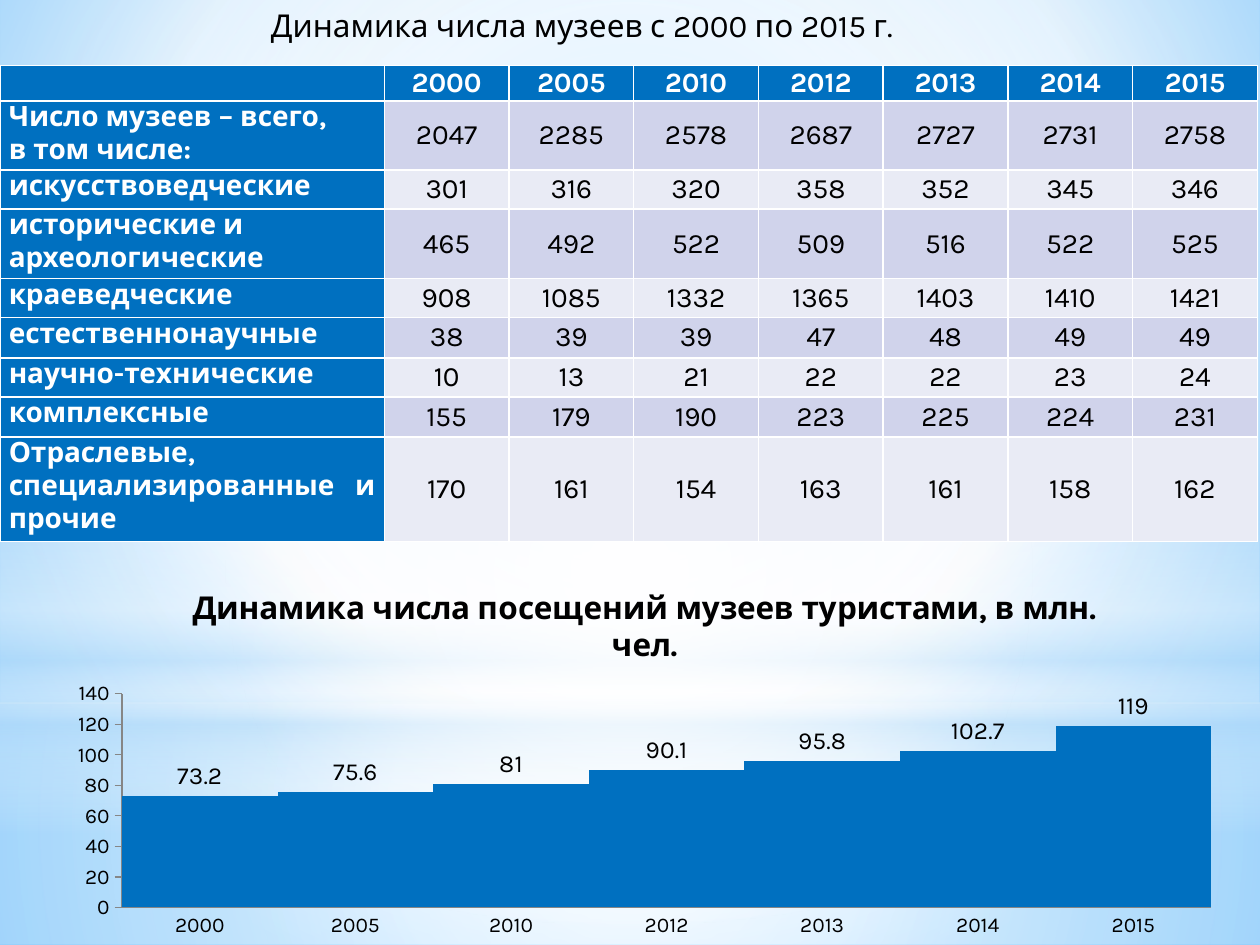
from lxml import etree
from pptx import Presentation
from pptx.chart.data import CategoryChartData
from pptx.dml.color import RGBColor
from pptx.enum.chart import XL_CHART_TYPE, XL_LABEL_POSITION, XL_TICK_MARK
from pptx.enum.shapes import MSO_SHAPE
from pptx.enum.text import MSO_ANCHOR, PP_ALIGN
from pptx.oxml.ns import nsdecls, qn
from pptx.util import Inches, Pt

COLUMN = XL_CHART_TYPE.COLUMN_CLUSTERED
OUTSIDE_END = XL_LABEL_POSITION.OUTSIDE_END
NO_TICK, TICK_OUT = XL_TICK_MARK.NONE, XL_TICK_MARK.OUTSIDE
RECT, OVAL = MSO_SHAPE.RECTANGLE, MSO_SHAPE.OVAL
MIDDLE, TOP = MSO_ANCHOR.MIDDLE, MSO_ANCHOR.TOP
CENTER, JUSTIFY = PP_ALIGN.CENTER, PP_ALIGN.JUSTIFY
FONT = "Karla"
BLUE, WHITE, BLACK, SKY, GREY = "0070C0", "FFFFFF", "000000", "B4DCFA", "868686"
BANDS = ["E9EBF5", "D0D3EB"]


def style(font, color=BLACK, **values):
    font.color.rgb = RGBColor.from_string(color)
    for key, value in {"name": FONT, "bold": False, **values}.items():
        setattr(font, key, value)


def set_gradient(fill, root, stops, focus=None):
    """Stops are (position, colour, opacity) in percent; without focus the gradient runs down."""
    fill.gradient()
    gs = "".join(
        f'<a:gs pos="{pos * 1000}"><a:srgbClr val="{color}">'
        f'<a:alpha val="{alpha * 1000}"/></a:srgbClr></a:gs>'
        for pos, color, alpha in stops)
    if focus:
        sides = " ".join(f'{k}="{v * 1000}"' for k, v in zip("ltrb", focus))
        way = f'<a:path path="circle"><a:fillToRect {sides}/></a:path>'
    else:
        way = '<a:lin ang="5400000" scaled="0"/>'
    old = root.find(".//" + qn("a:gradFill"))
    old.getparent().replace(old, etree.fromstring(
        f'<a:gradFill {nsdecls("a")} rotWithShape="1"><a:gsLst>{gs}</a:gsLst>{way}</a:gradFill>'))


prs = Presentation()
prs.slide_width, prs.slide_height = Inches(10), Inches(7.5)
W, H = prs.slide_width, prs.slide_height
s = prs.slides.add_slide(prs.slide_layouts[6])

# Background and its translucent layers: shape, top, height, stops, focus
set_gradient(s.background.fill, s.element,
             [(0, "9ED5FF", 100), (60, WHITE, 100), (100, "5BB9FF", 100)], (20, 10, 20, 60))
centre = (50, 50, 50, 50)
layers = [
    (RECT, 5.58, 1.92, [(0, WHITE, 91), (37, WHITE, 76), (100, SKY, 79)], centre),
    (RECT, 0, 5.58, [(0, WHITE, 89), (48, WHITE, 62), (100, SKY, 79)], centre),
    (RECT, 4.12, 2.5, [(0, WHITE, 0), (29, WHITE, 30), (45, SKY, 40), (55, WHITE, 26),
                       (65, SKY, 60), (100, WHITE, 0)], None),
    (OVAL, 1.75, 5.58, [(0, WHITE, 100), (56, WHITE, 0)], centre),
]
for kind, top, height, stops, focus in layers:
    sp = s.shapes.add_shape(kind, 0, Inches(top), W, Inches(height))
    sp.shadow.inherit = False
    sp.line.fill.background()
    set_gradient(sp.fill, sp.element, stops, focus)

# Museums table
years = ["2000", "2005", "2010", "2012", "2013", "2014", "2015"]
rows = [
    (0.22, "", years),
    (0.55, "Число музеев – всего,\nв том числе:", [2047, 2285, 2578, 2687, 2727, 2731, 2758]),
    (0.31, "искусствоведческие", [301, 316, 320, 358, 352, 345, 346]),
    (0.55, "исторические и\nархеологические", [465, 492, 522, 509, 516, 522, 525]),
    (0.31, "краеведческие", [908, 1085, 1332, 1365, 1403, 1410, 1421]),
    (0.32, "естественнонаучные", [38, 39, 39, 47, 48, 49, 49]),
    (0.31, "научно-технические", [10, 13, 21, 22, 22, 23, 24]),
    (0.32, "комплексные", [155, 179, 190, 223, 225, 224, 231]),
    (0.83, "Отраслевые, специализированные и прочие", [170, 161, 154, 163, 161, 158, 162]),
]
table = s.shapes.add_table(len(rows), len(years) + 1, 0, Inches(0.52), W, Inches(3.72)).table
table.first_col = True
for c, column in enumerate(table.columns):
    column.width = Inches(0.99 if c else 3.05)
for r, (height, label, values) in enumerate(rows):
    table.rows[r].height = Inches(height)
    for c, value in enumerate([label, *values]):
        cell = table.cell(r, c)
        heading = r == 0 or c == 0
        cell.fill.solid()
        cell.fill.fore_color.rgb = RGBColor.from_string(BLUE if heading else BANDS[r % 2])
        cell.margin_left = cell.margin_right = Inches(0.07)
        cell.margin_top = cell.margin_bottom = 0
        cell.vertical_anchor = MIDDLE if c else TOP
        cell.text_frame.text = str(value)
        for p in cell.text_frame.paragraphs:
            p.alignment = CENTER if c else JUSTIFY
            run = p.runs[0] if p.runs else p.add_run()
            style(run.font, WHITE if heading else BLACK, size=Pt(16), bold=heading)

# Slide title
tf = s.shapes.add_textbox(Inches(1.46), 0, Inches(5.83), Inches(0.4)).text_frame
tf.word_wrap = True
tf.vertical_anchor = MIDDLE
p = tf.paragraphs[0]
p.alignment = CENTER
p._p.get_or_add_pPr().set("indent", str(Inches(0.49)))
run = p.add_run()
run.text = "Динамика числа музеев с 2000 по 2015 г."
style(run.font, size=Pt(18))

# Visits chart
data = CategoryChartData()
data.categories = years
data.add_series("Series 1", [73.2, 75.6, 81, 90.1, 95.8, 102.7, 119])
chart = s.shapes.add_chart(COLUMN, Inches(0.43), H * 3 // 5, Inches(9.37), H * 2 // 5, data).chart
style(chart.font, size=Pt(10))
chart.has_legend = False
chart.has_title = True
p = chart.chart_title.text_frame.paragraphs[0]
run = p.add_run()
run.text = "Динамика числа посещений музеев туристами, в млн. чел."
style(run.font, size=Pt(18), bold=True)

for axis, tick in ((chart.category_axis, NO_TICK), (chart.value_axis, TICK_OUT)):
    axis.has_major_gridlines = False
    axis.major_tick_mark, axis.minor_tick_mark = tick, NO_TICK
    axis.format.line.color.rgb = RGBColor.from_string(GREY)
    style(axis.tick_labels.font, size=Pt(12))
axis = chart.value_axis
axis.minimum_scale, axis.maximum_scale, axis.major_unit = 0, 140, 20

plot = chart.plots[0]
plot.gap_width = 0
plot.vary_by_categories = False
series = plot.series[0]
series.format.fill.solid()
series.format.fill.fore_color.rgb = RGBColor.from_string(BLUE)
labels = series.data_labels
labels.show_value = True
labels.position = OUTSIDE_END
style(labels.font, size=Pt(14))

prs.save("out.pptx")
